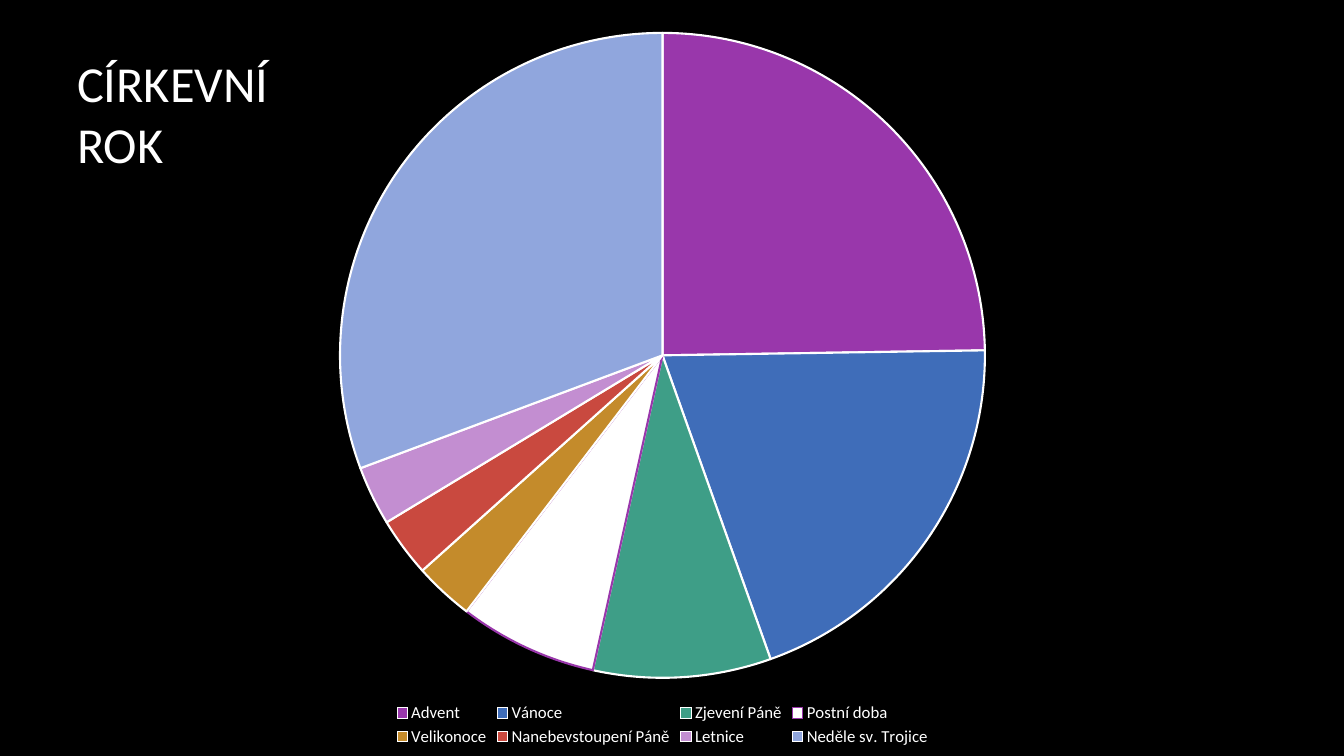
from pptx import Presentation
from pptx.chart.data import CategoryChartData
from pptx.dml.color import RGBColor
from pptx.enum.chart import XL_CHART_TYPE, XL_LEGEND_POSITION
from pptx.enum.text import MSO_ANCHOR, PP_ALIGN
from pptx.util import Emu, Pt

PIE = XL_CHART_TYPE.PIE
BOTTOM = XL_LEGEND_POSITION.BOTTOM
MIDDLE = MSO_ANCHOR.MIDDLE
LEFT = PP_ALIGN.LEFT

BLACK = RGBColor(0x00, 0x00, 0x00)
WHITE = RGBColor(0xFF, 0xFF, 0xFF)
PURPLE = RGBColor(0x99, 0x37, 0xAB)
BLUE = RGBColor(0x3F, 0x6D, 0xB9)
GREEN = RGBColor(0x3E, 0x9E, 0x87)
GOLD = RGBColor(0xC4, 0x8B, 0x2B)
RED = RGBColor(0xC9, 0x49, 0x3F)
LILAC = RGBColor(0xC3, 0x8E, 0xD1)
PERIWINKLE = RGBColor(0x90, 0xA6, 0xDD)

FONT = "Calibri"
EMU_PER_PX = 914400 / 100.8

# Season, share of the year, fill, outline
SEASONS = [
    ("Advent", 25, PURPLE, WHITE),
    ("Vánoce", 20, BLUE, WHITE),
    ("Zjevení Páně", 9, GREEN, WHITE),
    ("Postní doba", 7, WHITE, PURPLE),
    ("Velikonoce", 3, GOLD, WHITE),
    ("Nanebevstoupení Páně", 3, RED, WHITE),
    ("Letnice", 3, LILAC, WHITE),
    ("Neděle sv. Trojice", 31, PERIWINKLE, WHITE),
]


def px(length):
    return Emu(round(length * EMU_PER_PX))


def format_font(font, size):
    for name, value in {"name": FONT, "size": Pt(size), "bold": False}.items():
        setattr(font, name, value)
    font.color.rgb = WHITE


def set_title(slide, text, left, top, width, height):
    title = slide.shapes.title
    box = {"left": left, "top": top, "width": width, "height": height}
    for name, value in box.items():
        setattr(title, name, px(value))
    frame = title.text_frame
    frame.text = text
    frame.word_wrap = True
    frame.vertical_anchor = MIDDLE
    paragraph = frame.paragraphs[0]
    paragraph.alignment = LEFT
    format_font(paragraph.runs[0].font, 36)


def add_season_pie(slide, left, top, width, height):
    data = CategoryChartData()
    data.categories = [season for season, *_ in SEASONS]
    data.add_series("Series 1", [share for _, share, *_ in SEASONS])
    box = [px(length) for length in (left, top, width, height)]
    chart = slide.shapes.add_chart(PIE, *box, data).chart
    format_font(chart.font, 10)
    chart.has_title = False
    chart.has_legend = True
    legend = chart.legend
    legend.position = BOTTOM
    legend.include_in_layout = False
    format_font(legend.font, 12)

    plot = chart.plots[0]
    plot.vary_by_categories = True
    for index, (_, _, fill, outline) in enumerate(SEASONS):
        slice_format = plot.series[0].points[index].format
        slice_format.fill.solid()
        slice_format.fill.fore_color.rgb = fill
        slice_format.line.color.rgb = outline
        slice_format.line.width = Pt(1.5)


def main():
    presentation = Presentation()
    presentation.slide_width = px(1344)
    presentation.slide_height = px(756)
    slide = presentation.slides.add_slide(presentation.slide_layouts[5])
    background = slide.background.fill
    background.solid()
    background.fore_color.rgb = BLACK
    set_title(slide, "CÍRKEVNÍ ROK", 67, 40, 275, 146)
    add_season_pie(slide, 67, 19, 1191, 732)
    presentation.save("out.pptx")


if __name__ == "__main__":
    main()
